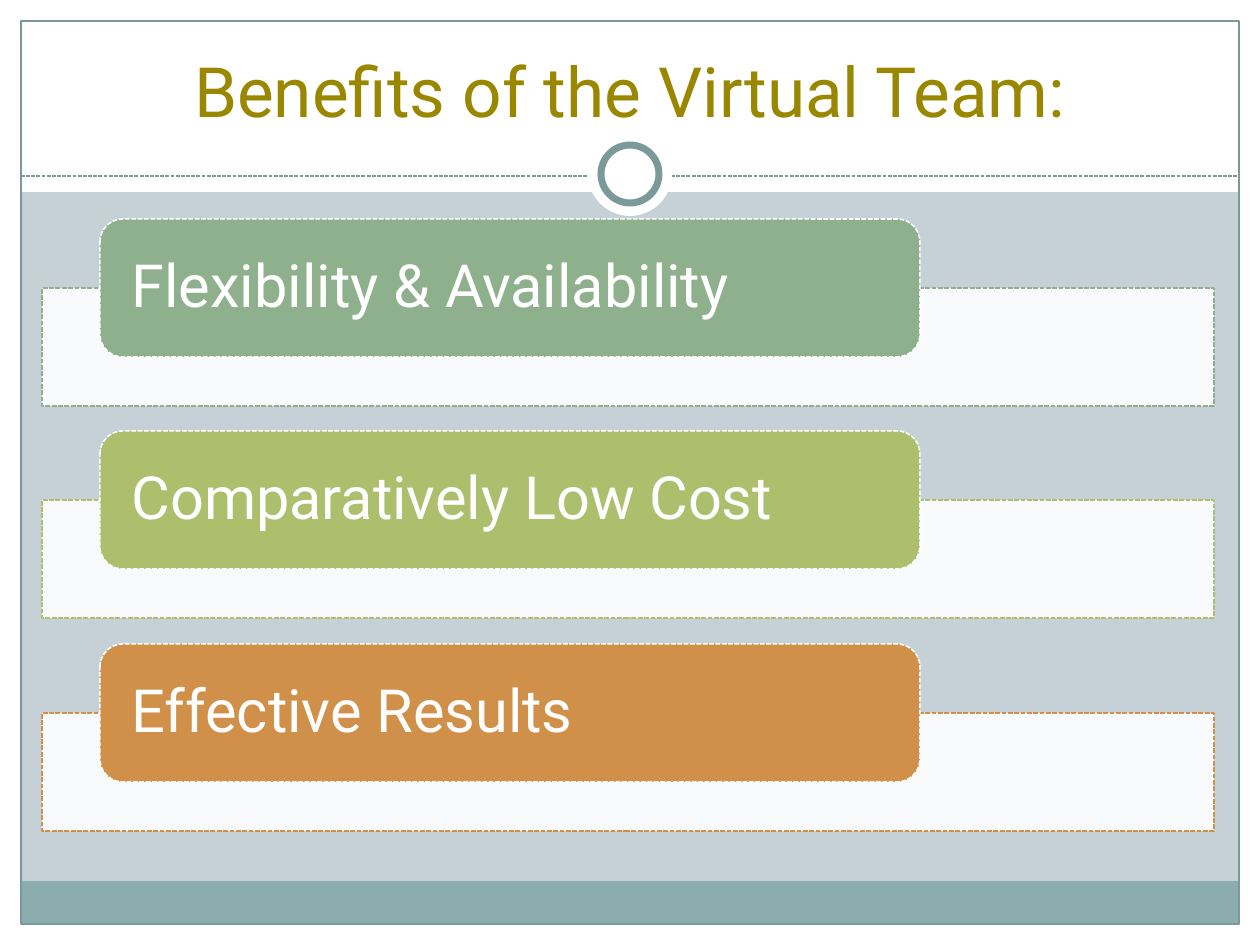
from dataclasses import dataclass

from lxml import etree
from pptx import Presentation
from pptx.dml.color import RGBColor
from pptx.enum.dml import MSO_LINE
from pptx.enum.shapes import MSO_CONNECTOR, MSO_SHAPE
from pptx.enum.text import MSO_ANCHOR, PP_ALIGN
from pptx.oxml.ns import qn
from pptx.util import Pt

RECT = MSO_SHAPE.RECTANGLE
ROUND = MSO_SHAPE.ROUNDED_RECTANGLE
OVAL = MSO_SHAPE.OVAL
STRAIGHT = MSO_CONNECTOR.STRAIGHT
DASH = MSO_LINE.SQUARE_DOT
LEFT = PP_ALIGN.LEFT
CENTER = PP_ALIGN.CENTER
MIDDLE = MSO_ANCHOR.MIDDLE
BOTTOM = MSO_ANCHOR.BOTTOM

WIDE, HIGH = 1260, 945
SCALE = 914400 / 126
EDGE = 21


@dataclass(frozen=True)
class Theme:
    font: str = "Roboto"
    back: str = "C5D1D7"
    white: str = "FFFFFF"
    foot: str = "8CADAE"
    frame: str = "7C999A"
    title: str = "998700"
    green: str = "8FB08C"
    lime: str = "ADBF6C"
    orange: str = "D19049"
    head_size: float = 39.6
    card_size: float = 34
    thin: float = 0.75
    rim: float = 0.9
    ring: float = 4


THEME = Theme()


def px(count):
    return round(count * SCALE)


def rgb(code):
    return RGBColor.from_string(code)


def stroke(line, color, width, dash=None):
    line.color.rgb = rgb(color)
    line.width = Pt(width)
    if dash:
        line.dash_style = dash


def shape(slide, kind, box, fill=None, line=None, width=THEME.thin, dash=None, alpha=None):
    item = slide.shapes.add_shape(kind, *map(px, box))
    item.shadow.inherit = False
    if fill:
        item.fill.solid()
        item.fill.fore_color.rgb = rgb(fill)
    else:
        item.fill.background()
    if alpha:
        tint = item.fill._xPr.find(qn("a:solidFill"))[0]
        etree.SubElement(tint, qn("a:alpha")).set("val", str(alpha * 1000))
    if line:
        stroke(item.line, line, width, dash)
    else:
        item.line.fill.background()
    return item


def rule(slide, left, right, top):
    item = slide.shapes.add_connector(STRAIGHT, px(left), px(top), px(right), px(top))
    stroke(item.line, THEME.frame, THEME.thin, DASH)
    etree.SubElement(item._element.spPr, qn("a:effectLst"))


def write(item, text, size, color, align=LEFT, anchor=MIDDLE, side=0, edge=0, space=None):
    frame = item.text_frame
    frame.word_wrap = True
    frame.vertical_anchor = anchor
    frame.margin_left = frame.margin_right = px(side)
    frame.margin_top = frame.margin_bottom = px(edge)
    para = frame.paragraphs[0]
    para.alignment = align
    para.line_spacing = space
    run = para.add_run()
    run.text = text
    run.font.name = THEME.font
    run.font.size = Pt(size)
    run.font.color.rgb = rgb(color)


def backdrop(slide):
    slide.background.fill.solid()
    slide.background.fill.fore_color.rgb = rgb(THEME.back)
    for box in (
        (0, HIGH - EDGE, WIDE, EDGE),
        (0, 0, WIDE, 192),
        (0, 0, EDGE, HIGH),
        (WIDE - EDGE, 0, EDGE, HIGH),
    ):
        shape(slide, RECT, box, THEME.white)
    inner = WIDE - 2 * EDGE
    shape(slide, RECT, (EDGE, 881, inner, 43), THEME.foot)
    shape(slide, RECT, (EDGE, EDGE, inner, HIGH - 2 * EDGE), line=THEME.frame)
    rule(slide, EDGE, WIDE - EDGE, 176)
    shape(slide, OVAL, (588, 132, 84, 84), THEME.white)
    shape(slide, OVAL, (601, 145, 58, 58), THEME.white, THEME.frame, THEME.ring)


def heading(slide, text):
    item = slide.shapes.add_textbox(*map(px, (42, 32, 1176, 105)))
    write(item, text, THEME.head_size, THEME.title, CENTER, BOTTOM, side=13, edge=6)


def benefit(slide, top, text, color):
    shape(slide, RECT, (42, top + 69, 1172, 118), THEME.white, color, THEME.rim, DASH, alpha=90)
    card = shape(slide, ROUND, (100, top, 820, 138), color, THEME.white, THEME.rim, DASH)
    write(card, text, THEME.card_size, THEME.white, side=25, space=0.9)


def main():
    deck = Presentation()
    deck.slide_width, deck.slide_height = px(WIDE), px(HIGH)
    slide = deck.slides.add_slide(deck.slide_layouts[6])
    backdrop(slide)
    heading(slide, "Benefits of the Virtual Team:")
    rows = (
        ("Flexibility & Availability", THEME.green),
        ("Comparatively Low Cost", THEME.lime),
        ("Effective Results", THEME.orange),
    )
    for index, (text, color) in enumerate(rows):
        benefit(slide, 219 + index * 425 // 2, text, color)
    deck.save("out.pptx")


if __name__ == "__main__":
    main()
